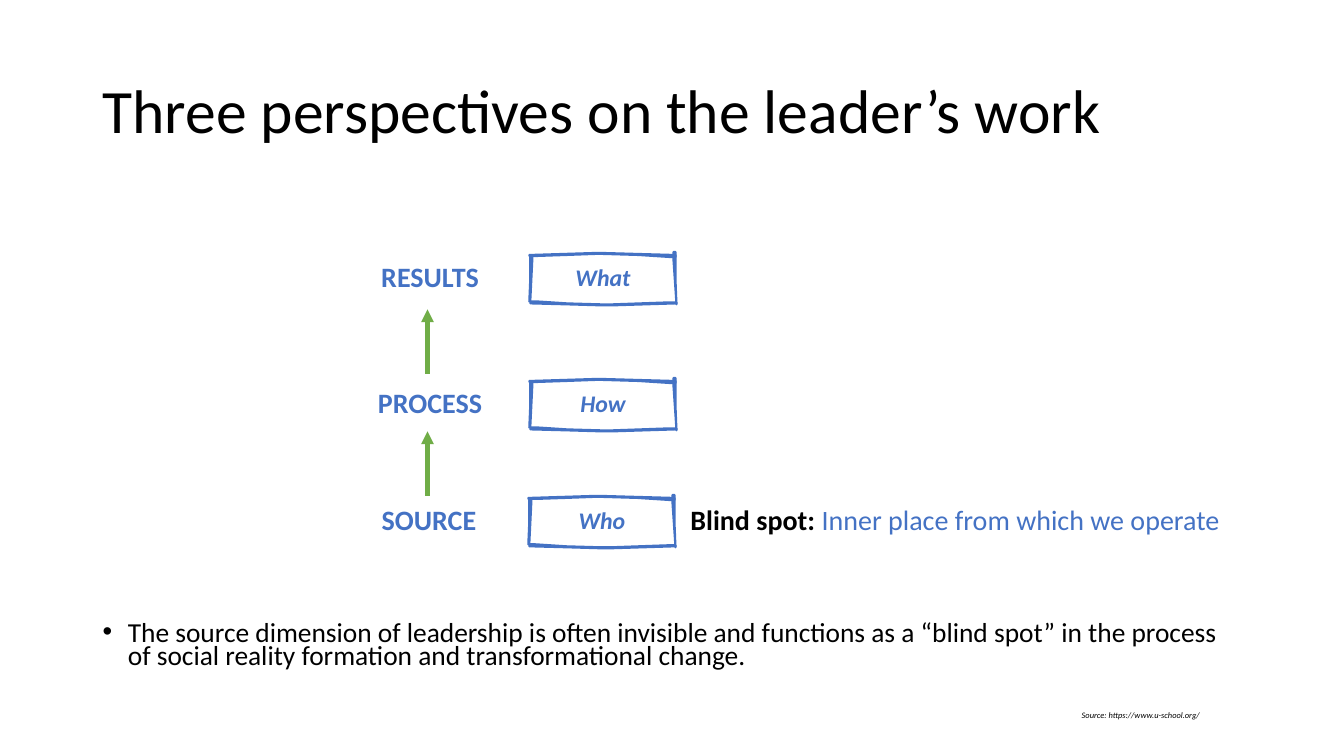
from dataclasses import dataclass

from lxml.etree import SubElement
from pptx import Presentation
from pptx.dml.color import RGBColor
from pptx.enum.shapes import MSO_CONNECTOR
from pptx.enum.text import MSO_ANCHOR, PP_ALIGN
from pptx.oxml.ns import qn
from pptx.util import Inches, Pt


@dataclass(frozen=True)
class Theme:
    """Colours, font and type sizes of the slide."""
    font: str = "Calibri"
    black: RGBColor = RGBColor(0x00, 0x00, 0x00)
    blue: RGBColor = RGBColor(0x44, 0x72, 0xC4)
    green: RGBColor = RGBColor(0x70, 0xAD, 0x47)
    title: float = 44
    label: float = 20
    body: float = 19.6
    box: float = 17
    source: float = 6


THEME = Theme()
FRAME_W, FRAME_H = 146, 52
TOP_STROKE = [(65, 0), (0, 2), (0, 3), (8, 3), (37, 2), (65, 1), (73, 1),
              (108, 2), (139, 4), (145, 4), (145, 2), (108, 1), (73, 0)]
BOTTOM_STROKE = [(FRAME_W - x, FRAME_H - y) for x, y in TOP_STROKE]
LEFT_STROKE = [(0, 48), (1, 48), (3, 7), (3, 3), (1, 3), (1, 25)]
RIGHT_STROKE = [(146, 51), (143, 7), (143, -1), (145, -1), (145, 25)]
ROWS = [("RESULTS", "What", 5.25, 2.51),
        ("PROCESS", "How", 5.25, 3.76),
        ("SOURCE", "Who", 5.24, 4.92)]


def add_text(s, box, runs, size, align=PP_ALIGN.LEFT, anchor=MSO_ANCHOR.TOP,
             inset=0.1, spacing=None, wrap=True, italic=False):
    """Add one paragraph of (text, colour, bold) runs and return it."""
    tf = s.shapes.add_textbox(*map(Inches, box)).text_frame
    tf.word_wrap = wrap
    tf.vertical_anchor = anchor
    tf.margin_top = tf.margin_bottom = Inches(inset)
    p = tf.paragraphs[0]
    p.alignment = align
    p.line_spacing = spacing
    for text, color, bold in runs:
        r = p.add_run()
        r.text = text
        r.font.color.rgb = color
        r.font.bold = bold
        r.font.name = THEME.font
        r.font.size = Pt(size)
        r.font.italic = italic
    return p


def add_frame(s, x, y):
    """Draw a hand-sketched frame from four tapered strokes."""
    group = s.shapes.add_group_shape()
    for stroke in (BOTTOM_STROKE, RIGHT_STROKE, LEFT_STROKE, TOP_STROKE):
        builder = group.shapes.build_freeform(*stroke[0], scale=Inches(0.01))
        builder.add_line_segments(stroke[1:], close=True)
        sp = builder.convert_to_shape(Inches(x), Inches(y))
        sp.shadow.inherit = False
        sp.fill.solid()
        sp.fill.fore_color.rgb = THEME.blue
        sp.line.color.rgb = THEME.blue
        sp.line.width = Pt(1.5)


def add_row(s, label, question, x, y):
    """Place a perspective label beside its framed question."""
    add_text(s, (x - 2.01, y - 0.06, 2.05, 0.58), [(label, THEME.blue, True)],
             THEME.label, PP_ALIGN.CENTER, MSO_ANCHOR.MIDDLE)
    add_frame(s, x, y)
    add_text(s, (x + 0.04, y + 0.08, 1.38, 0.36),
             [(question, THEME.blue, True)], THEME.box, PP_ALIGN.CENTER,
             MSO_ANCHOR.MIDDLE, spacing=0.9, italic=True)


def add_up_arrow(s, x, bottom, length=0.64):
    """Draw a green arrow pointing up from the given bottom."""
    line = s.shapes.add_connector(
        MSO_CONNECTOR.STRAIGHT, Inches(x), Inches(bottom),
        Inches(x), Inches(bottom - length))
    line.line.color.rgb = THEME.green
    line.line.width = Pt(3)
    SubElement(line.line._get_or_add_ln(), qn("a:tailEnd"), type="triangle")
    SubElement(line._element.spPr, qn("a:effectLst"))


def add_diagram(s):
    """Build the three perspectives, their arrows and the blind spot note."""
    for row in ROWS:
        add_row(s, *row)
    x, y = ROWS[-1][2:]
    add_text(s, (x + 1.51, y - 0.06, 5.58, 0.58),
             [("Blind spot: ", THEME.black, True),
              ("Inner place from which we operate", THEME.blue, False)],
             THEME.label, anchor=MSO_ANCHOR.MIDDLE)
    for bottom in (4.92, 3.71):
        add_up_arrow(s, 4.24, bottom)


def add_bullet(s, box, text):
    """Add the bulleted conclusion with a hanging indent."""
    p = add_text(s, box, [(text, THEME.black, False)], THEME.body,
                 inset=0.05, spacing=0.7)
    pPr = p._p.get_or_add_pPr()
    pPr.set("marL", str(Inches(0.25)))
    pPr.set("indent", str(-Inches(0.25)))
    SubElement(pPr, qn("a:buFont"), typeface="Arial")
    SubElement(pPr, qn("a:buChar"), char="•")


def main():
    """Build and save the slide."""
    prs = Presentation()
    prs.slide_width, prs.slide_height = Inches(13.33), Inches(7.5)
    s = prs.slides.add_slide(prs.slide_layouts[6])
    add_text(s, (0.92, 0.4, 11.5, 1.45),
             [("Three perspectives on the leader’s work", THEME.black, False)],
             THEME.title, anchor=MSO_ANCHOR.MIDDLE, inset=0.05, spacing=0.9)
    add_diagram(s)
    add_bullet(s, (0.92, 6.14, 11.5, 0.62),
               "The source dimension of leadership is often invisible and "
               "functions as a “blind spot” in the process of social reality "
               "formation and transformational change.")
    add_text(s, (10.63, 7, 1.42, 0.2),
             [("Source: https://www.u-school.org/", THEME.black, False)],
             THEME.source, inset=0.05, wrap=False, italic=True)
    prs.save("out.pptx")


if __name__ == "__main__":
    main()
